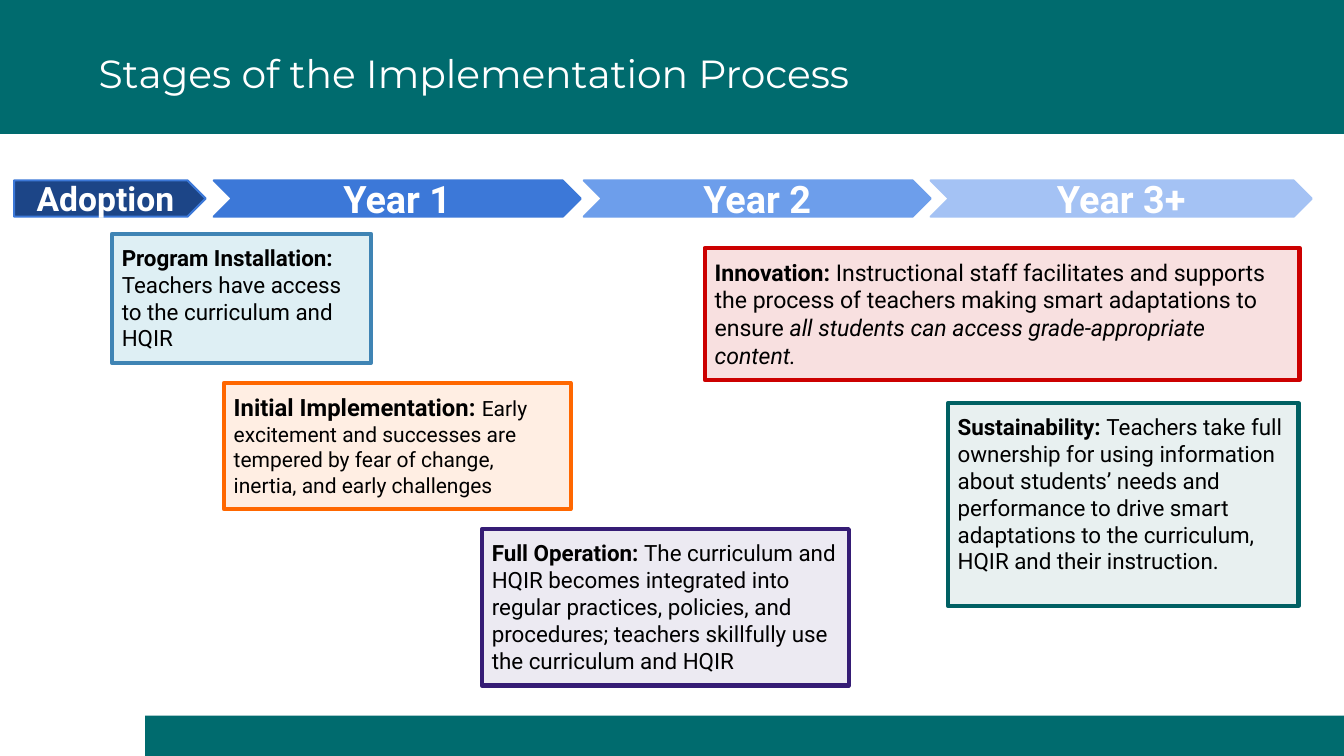
from lxml import etree
from pptx import Presentation
from pptx.dml.color import RGBColor
from pptx.enum import shapes, text
from pptx.oxml import ns
from pptx.util import Inches, Pt

COLORS = {
    "teal": "006B6E", "white": "FFFFFF", "black": "000000",
    "navy": "1C4587", "blue": "3C78D8", "sky": "6D9EEB", "pale": "A4C2F4",
    "aqua": "2598B8", "steel": "3F84B4", "orange": "FF6700",
    "red": "CC0000", "pine": "006063", "purple": "351C75",
}
KIND = shapes.MSO_SHAPE


def rgb(name):
    return RGBColor.from_string(COLORS[name])


def add_block(kind, spot, fill, line=None, width=0, inset=0.1):
    """Add a flat shape at spot (left, top, width, height in inches)."""
    block = slide.shapes.add_shape(kind, *[Inches(n) for n in spot])
    block.shadow.inherit = False
    block.fill.solid()
    block.fill.fore_color.rgb = rgb(fill)
    if line:
        block.line.color.rgb = rgb(line)
        block.line.width = Pt(width)
    else:
        block.line.fill.background()
    frame = block.text_frame
    frame.word_wrap = True
    frame.margin_left = frame.margin_right = Inches(inset)
    frame.margin_top = frame.margin_bottom = Inches(inset)
    return block


deck = Presentation()
deck.slide_width = Inches(13.33)
deck.slide_height = Inches(7.5)
slide = deck.slides.add_slide(deck.slide_layouts[6])

# Header, footer and title
add_block(KIND.RECTANGLE, (0, 0, 13.33, 1.33), "teal")
add_block(KIND.RECTANGLE, (1.44, 7.1, 11.89, 0.4), "teal")

title = slide.shapes.add_textbox(Inches(0.88), Inches(0.11), Inches(11.8), Inches(1.22))
frame = title.text_frame
frame.word_wrap = True
frame.vertical_anchor = text.MSO_ANCHOR.MIDDLE
para = frame.paragraphs[0]
para.text = "Stages of the Implementation Process"
para.font.name = "Montserrat"
para.font.size = Pt(28)
para.font.color.rgb = rgb("white")

# Timeline: label, shape, left, width, fill, line, text size
stages = [
    ("Adoption", KIND.PENTAGON, 0.14, 1.9, "navy", "blue", 24),
    ("Year 1", KIND.CHEVRON, 2.12, 3.64, "blue", "blue", 27),
    ("Year 2", KIND.CHEVRON, 5.79, 3.44, "sky", "sky", 27),
    ("Year 3+", KIND.CHEVRON, 9.23, 3.78, "pale", "pale", 27),
]
for label, kind, left, width, fill, line, size in stages:
    arrow = add_block(kind, (left, 1.79, width, 0.36), fill, line, 1.5, 0.13)
    arrow.text_frame.vertical_anchor = text.MSO_ANCHOR.MIDDLE
    para = arrow.text_frame.paragraphs[0]
    para.text = label
    para.alignment = text.PP_ALIGN.CENTER
    para.font.name = "Roboto"
    para.font.size = Pt(size)
    para.font.bold = True
    para.font.color.rgb = rgb("white")

# Notes: place, fill, opacity in percent, line, head size, body size, head, body, ending
notes = [
    ((1.11, 2.32, 2.57, 1.28), "aqua", 15, "steel", 16, 16, "Program Installation: ",
     "Teachers have access to the curriculum and HQIR", ""),
    ((2.22, 3.8, 3.44, 1.25), "orange", 11, "orange", 17, 15, "Initial Implementation: ",
     "Early excitement and successes are tempered by fear of change, inertia, "
     "and early challenges", ""),
    ((6.99, 2.46, 5.9, 1.31), "red", 12, "red", 16.5, 16.5, "Innovation: ",
     "Instructional staff facilitates and supports the process of teachers "
     "making smart adaptations to ensure ",
     "all students can access grade-appropriate content."),
    ((9.4, 4, 3.48, 2.01), "pine", 9, "pine", 16, 16, "Sustainability: ",
     "Teachers take full ownership for using information about students’ needs "
     "and performance to drive smart adaptations to the curriculum, HQIR and "
     "their instruction.", ""),
    ((4.78, 5.25, 3.64, 1.55), "purple", 9, "purple", 16, 16, "Full Operation: ",
     "The curriculum and HQIR becomes integrated into regular practices, "
     "policies, and procedures; teachers skillfully use the curriculum and HQIR", ""),
]
for spot, fill, alpha, line, big, small, head, body, ending in notes:
    note = add_block(KIND.RECTANGLE, spot, fill, line, 3)
    tint = note.fill._xPr.find(".//" + ns.qn("a:srgbClr"))
    etree.SubElement(tint, ns.qn("a:alpha"), val=str(alpha * 1000))
    frame = note.text_frame
    frame.auto_size = text.MSO_AUTO_SIZE.SHAPE_TO_FIT_TEXT
    frame.vertical_anchor = text.MSO_ANCHOR.TOP
    para = frame.paragraphs[0]
    para.alignment = text.PP_ALIGN.LEFT
    para.space_after = Pt(10)
    para.font.name = "Roboto"
    para.font.color.rgb = rgb("black")
    parts = [(head, big, True, False), (body, small, False, False),
             (ending, small, False, True)]
    for words, size, bold, italic in parts:
        if words:
            run = para.add_run()
            run.text = words
            run.font.size = Pt(size)
            run.font.bold = bold
            run.font.italic = italic

deck.save("out.pptx")
